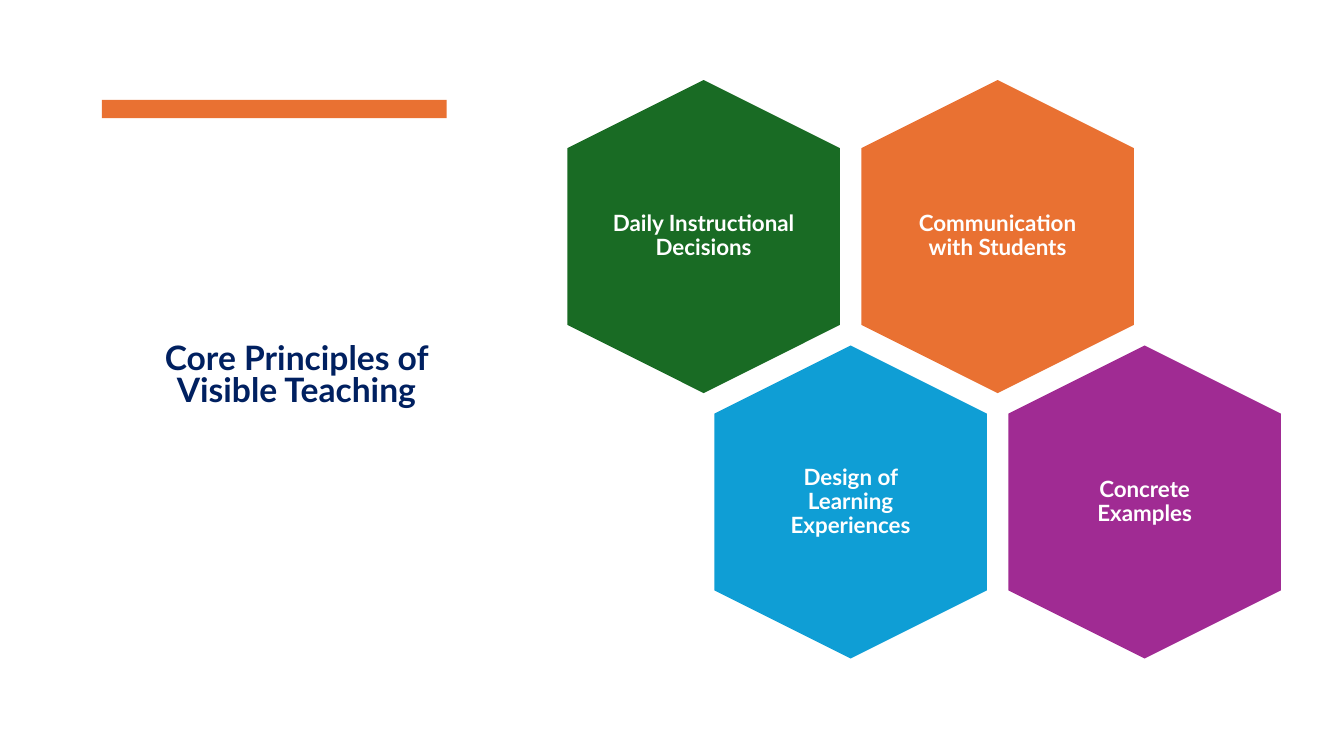
from pptx import Presentation
from pptx.dml.color import RGBColor
from pptx.enum.shapes import MSO_SHAPE as SHAPE
from pptx.enum.text import MSO_ANCHOR as ANCHOR, MSO_AUTO_SIZE as AUTO_SIZE, PP_ALIGN as ALIGN
from pptx.util import Pt

NAVY = RGBColor(0x00, 0x20, 0x60)
ORANGE = RGBColor(0xE9, 0x71, 0x32)
GREEN = RGBColor(0x19, 0x6B, 0x24)
BLUE = RGBColor(0x0F, 0x9E, 0xD5)
PURPLE = RGBColor(0xA0, 0x2B, 0x93)
WHITE = RGBColor(0xFF, 0xFF, 0xFF)

TITLE = "Core Principles of Visible Teaching"
PRINCIPLES = [
    [("Daily Instructional Decisions", GREEN, 0), ("Communication with Students", ORANGE, 5)],
    [("Design of Learning Experiences", BLUE, 5), ("Concrete Examples", PURPLE, 0)],
]

FIRST_X, FIRST_Y = 502.6, 169
COLUMN_STEP, ROW_STEP = 210, 189.6
HEX_LENGTH, HEX_BREADTH = 223.6, 194.6
LABEL_WIDTH, LABEL_HEIGHT = 134, 154


def add_block(slide, preset, left, top, width, height, color):
    block = slide.shapes.add_shape(preset, Pt(left), Pt(top), Pt(width), Pt(height))
    block.shadow.inherit = False
    block.fill.solid()
    block.fill.fore_color.rgb = color
    block.line.fill.background()
    return block


def add_words(slide, words, left, top, width, height, size, color, spacing):
    frame = slide.shapes.add_textbox(Pt(left), Pt(top), Pt(width), Pt(height)).text_frame
    frame.word_wrap = True
    line = frame.paragraphs[0]
    line.text = words
    line.alignment = ALIGN.CENTER
    line.line_spacing = spacing
    line.font.name = "Lato"
    line.font.size = Pt(size)
    line.font.bold = True
    line.font.color.rgb = color
    return frame


def add_principle(slide, words, color, inset, center_x, center_y):
    hexagon = add_block(slide, SHAPE.HEXAGON, center_x - HEX_LENGTH / 2,
                        center_y - HEX_BREADTH / 2, HEX_LENGTH, HEX_BREADTH, color)
    hexagon.rotation = 90
    hexagon.adjustments[0] = 0.25
    label = add_words(slide, words, center_x - LABEL_WIDTH / 2, center_y - LABEL_HEIGHT / 2,
                      LABEL_WIDTH, LABEL_HEIGHT, 16, WHITE, 0.9)
    label.vertical_anchor = ANCHOR.MIDDLE
    label.margin_left = label.margin_right = Pt(inset)
    label.margin_top = label.margin_bottom = Pt(inset)


def main():
    deck = Presentation()
    deck.slide_width, deck.slide_height = Pt(960), Pt(540)
    slide = deck.slides.add_slide(deck.slide_layouts[6])

    title = add_words(slide, TITLE, 81.4, 242.6, 260.6, 54.7, 24, NAVY, 0.8)
    title.auto_size = AUTO_SIZE.SHAPE_TO_FIT_TEXT

    for row, principles in enumerate(PRINCIPLES):
        for column, (words, color, inset) in enumerate(principles):
            add_principle(slide, words, color, inset,
                          FIRST_X + (column + row / 2) * COLUMN_STEP, FIRST_Y + row * ROW_STEP)

    add_block(slide, SHAPE.RECTANGLE, 72.8, 71.4, 246.2, 13, ORANGE)
    deck.save("out.pptx")


if __name__ == "__main__":
    main()
